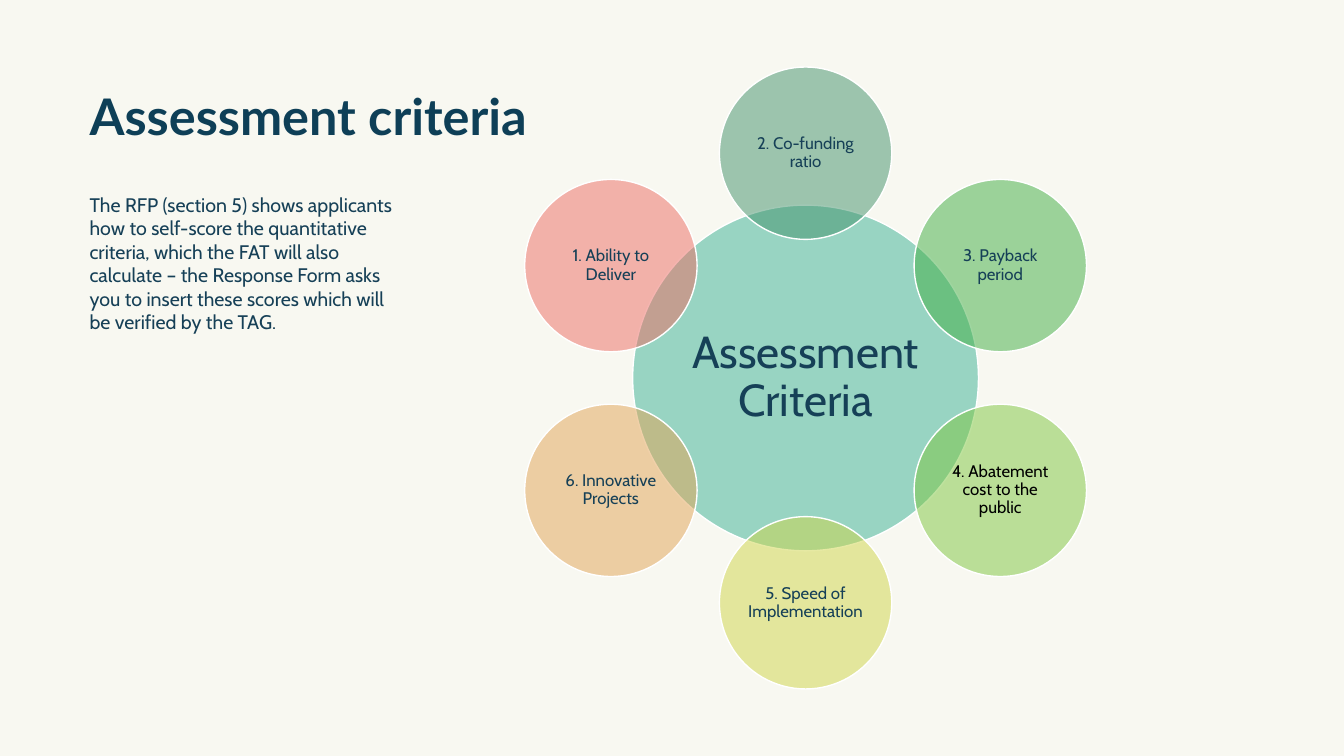
from math import cos, radians, sin

from lxml import etree
from pptx import Presentation
from pptx.dml.color import RGBColor
from pptx.enum import shapes, text
from pptx.oxml.ns import qn
from pptx.util import Inches, Pt

# Content
TITLE = "Assessment criteria"
INTRO = ("The RFP (section 5) shows applicants how to self-score the quantitative "
         "criteria, which the FAT will also calculate – the Response Form asks you "
         "to insert these scores which will be verified by the TAG.")
HUB = "Assessment Criteria"
# Clockwise from the top: label, fill, text colour
CRITERIA = [
    ("2. Co-funding ratio", "42926B", "ink"),
    ("3. Payback period", "40AD42", "ink"),
    ("4. Abatement cost to the public", "7EC63F", "black"),
    ("5. Speed of Implementation", "CFD548", "ink"),
    ("6. Innovative Projects", "E2A354", "ink"),
    ("1. Ability to Deliver", "ED6B62", "ink"),
]

THEME = {
    "background": "F8F8F1", "title": "0E3F57", "ink": "164057", "black": "000000",
    "hub": "3AB295", "outline": "FFFFFF",
    "heading_font": "Lato", "body_font": "Cabin",
    "title_size": 36, "intro_size": 14, "hub_size": 32, "criterion_size": 12,
}

# Layout in inches
CENTRE_X, CENTRE_Y = 7.99, 3.75
ORBIT = 2.23
HUB_DIAMETER, CRITERION_DIAMETER = 3.43, 1.71


def write(frame, words, size, color="ink", font="body_font", bold=False,
          align=text.PP_ALIGN.LEFT, anchor=text.MSO_ANCHOR.TOP,
          spacing=None, inset=None):
    frame.word_wrap = True
    frame.vertical_anchor = anchor
    if inset is not None:
        frame.margin_left = frame.margin_right = Inches(inset)
        frame.margin_top = frame.margin_bottom = Inches(inset)
    paragraph = frame.paragraphs[0]
    paragraph.alignment = align
    paragraph.line_spacing = spacing
    run = paragraph.add_run()
    run.text = words
    run.font.size = Pt(THEME[size])
    run.font.name = THEME[font]
    run.font.bold = bold
    run.font.color.rgb = RGBColor.from_string(THEME[color])


def add_circle(slide, x, y, diameter, fill, words, **style):
    circle = slide.shapes.add_shape(
        shapes.MSO_SHAPE.OVAL, Inches(x - diameter / 2), Inches(y - diameter / 2),
        Inches(diameter), Inches(diameter))
    circle.shadow.inherit = False
    circle.fill.solid()
    circle.fill.fore_color.rgb = RGBColor.from_string(fill)
    # Half-transparent fill
    rgb = circle._element.spPr.find(qn("a:solidFill")).find(qn("a:srgbClr"))
    etree.SubElement(rgb, qn("a:alpha")).set("val", "50000")
    circle.line.color.rgb = RGBColor.from_string(THEME["outline"])
    circle.line.width = Pt(1)
    write(circle.text_frame, words, align=text.PP_ALIGN.CENTER,
          anchor=text.MSO_ANCHOR.MIDDLE, spacing=0.9, **style)


def main():
    deck = Presentation()
    deck.slide_width, deck.slide_height = Inches(13.33), Inches(7.5)
    slide = deck.slides.add_slide(deck.slide_layouts[6])
    slide.background.fill.solid()
    slide.background.fill.fore_color.rgb = RGBColor.from_string(THEME["background"])

    # Introduction
    intro = slide.shapes.add_textbox(Inches(0.79), Inches(1.86), Inches(3.3), Inches(1.51))
    write(intro.text_frame, INTRO, "intro_size")

    # Hub, then the criteria at equal angles around it
    add_circle(slide, CENTRE_X, CENTRE_Y, HUB_DIAMETER, THEME["hub"], HUB,
               size="hub_size", inset=0.04)
    for index, (label, fill, color) in enumerate(CRITERIA):
        angle = radians(index * 360 / len(CRITERIA))
        add_circle(slide, CENTRE_X + ORBIT * sin(angle), CENTRE_Y - ORBIT * cos(angle),
                   CRITERION_DIAMETER, fill, label,
                   size="criterion_size", inset=0.02, color=color)

    # Title
    title = slide.shapes.add_textbox(Inches(0.79), Inches(0.74), Inches(12.05), Inches(0.88))
    write(title.text_frame, TITLE, "title_size", color="title", font="heading_font",
          bold=True, anchor=text.MSO_ANCHOR.MIDDLE, spacing=0.9)
    deck.save("out.pptx")


if __name__ == "__main__":
    main()
